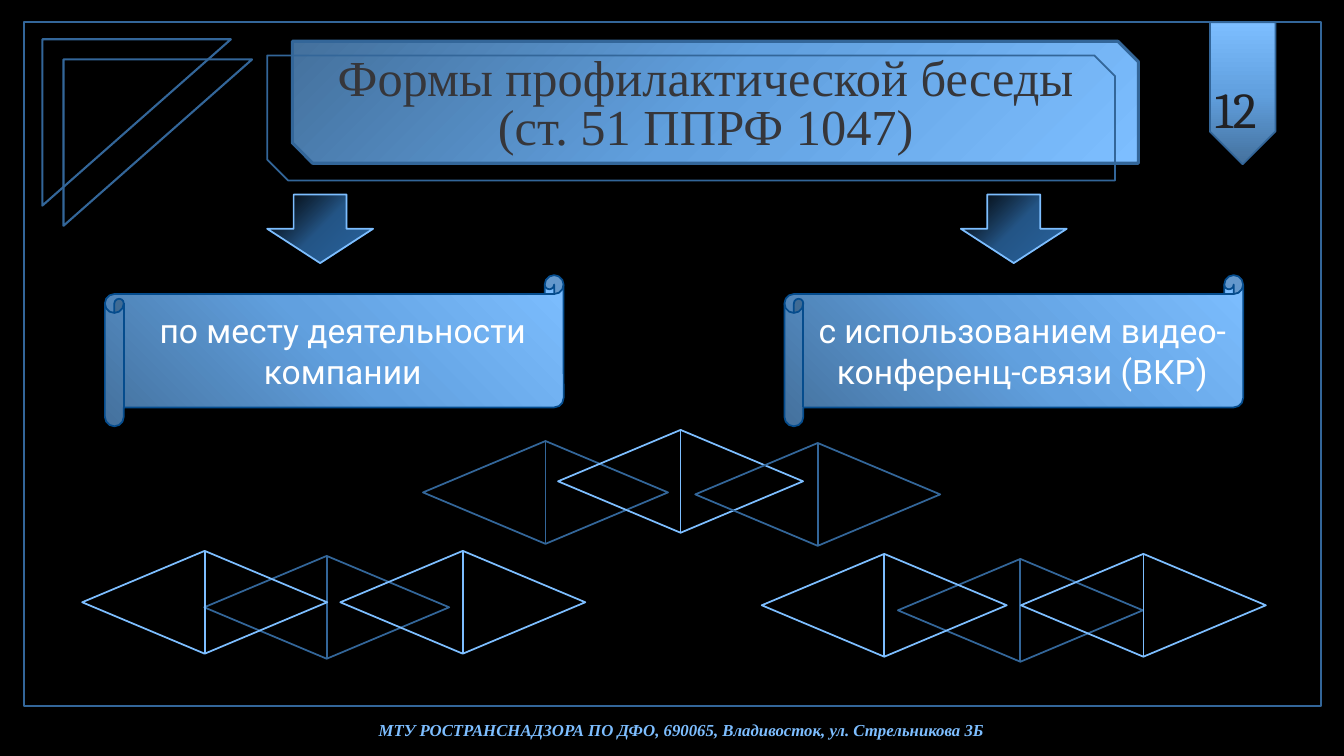
from dataclasses import dataclass

from lxml import etree
from pptx import Presentation
from pptx.dml.color import RGBColor
from pptx.enum.shapes import MSO_SHAPE
from pptx.enum.text import MSO_AUTO_SIZE, PP_ALIGN
from pptx.oxml.ns import qn
from pptx.util import Inches, Pt

RECTANGLE = MSO_SHAPE.RECTANGLE
TRIANGLE = MSO_SHAPE.RIGHT_TRIANGLE
PENTAGON = MSO_SHAPE.PENTAGON
SNIPPED = MSO_SHAPE.SNIP_2_DIAG_RECTANGLE
SCROLL = MSO_SHAPE.HORIZONTAL_SCROLL
DOWN_ARROW = MSO_SHAPE.DOWN_ARROW
SORT_DIAMOND = MSO_SHAPE.FLOWCHART_SORT
CENTER, LEFT = PP_ALIGN.CENTER, PP_ALIGN.LEFT
FIT_SHAPE = MSO_AUTO_SIZE.SHAPE_TO_FIT_TEXT


@dataclass(frozen=True)
class Theme:
    background: str = "000000"
    frame: str = "336699"
    bright: str = "7DBEFF"
    scroll_edge: str = "054C8D"
    title: str = "36363A"
    number: str = "212123"
    label: str = "FFFFFF"
    serif: str = "Times New Roman"
    sans: str = "Roboto"
    number_font: str = "Cambria"
    title_size: int = 36
    label_size: int = 24
    footer_size: int = 12
    # Gradient stops: position, colour, opacity (percent)
    panel: tuple = ((0, "44719D", 100), (50, "61A0DF", 100), (100, "7DBEFF", 100))
    arrow: tuple = ((0, "1A3C5F", 0), (50, "255687", 100), (100, "2B66A1", 100))


THEME = Theme()


def fill_gradient(shape, stops, angle):
    """Fill with the stops; the angle runs clockwise in degrees."""
    shape.fill.gradient()
    shape.fill.gradient_angle = (360 - angle) % 360
    stop_list = shape.element.spPr.find(qn("a:gradFill")).find(qn("a:gsLst"))
    for stop in list(stop_list):
        stop_list.remove(stop)
    for position, color, opacity in stops:
        stop = etree.SubElement(stop_list, qn("a:gs"), pos=str(position * 1000))
        tint = etree.SubElement(stop, qn("a:srgbClr"), val=color)
        if opacity < 100:
            etree.SubElement(tint, qn("a:alpha"), val=str(opacity * 1000))


def add_figure(page, kind, area, line, width=1.25, gradient=None, angle=0, rotation=0):
    shape = page.shapes.add_shape(kind, *map(Inches, area))
    shape.shadow.inherit = False
    shape.rotation = rotation
    shape.line.color.rgb = RGBColor.from_string(line)
    shape.line.width = Pt(width)
    if gradient:
        fill_gradient(shape, gradient, angle)
    else:
        shape.fill.background()
    return shape


def add_text(page, area, text, font, size, color, align=CENTER, spacing=None,
             wrap=True, fit=FIT_SHAPE, **style):
    box = page.shapes.add_textbox(*map(Inches, area))
    frame = box.text_frame
    frame.word_wrap = wrap
    frame.auto_size = fit
    para = frame.paragraphs[0]
    para.alignment = align
    para.line_spacing = spacing
    span = para.add_run()
    span.text = text
    span.font.color.rgb = RGBColor.from_string(color)
    for name, value in {"name": font, "size": Pt(size), **style}.items():
        setattr(span.font, name, value)


def add_corner_triangle(page, left, top):
    triangle = add_figure(page, TRIANGLE, (left, top, 1.87, 1.65), THEME.frame, 1.5)
    triangle.element.spPr.find(qn("a:xfrm")).set("flipV", "1")


def add_form(page, scroll_left, arrow_left, text):
    add_figure(page, SCROLL, (scroll_left, 2.73, 4.55, 1.5), THEME.scroll_edge,
               gradient=THEME.panel, angle=315)
    add_text(page, (scroll_left + 0.17, 3.03, 4.38, 0.91), text,
             THEME.sans, THEME.label_size, THEME.label)
    add_figure(page, DOWN_ARROW, (arrow_left, 1.93, 1.05, 0.68), THEME.bright,
               gradient=THEME.arrow, angle=45)


def add_diamonds(page, diamonds):
    for left, top, color in diamonds:
        add_figure(page, SORT_DIAMOND, (left, top, 1.02, 2.43), color, rotation=90)


def main():
    deck = Presentation()
    deck.slide_width, deck.slide_height = Inches(13.33), Inches(7.5)
    page = deck.slides.add_slide(deck.slide_layouts[6])
    page.background.fill.solid()
    page.background.fill.fore_color.rgb = RGBColor.from_string(THEME.background)

    # Frame, footer and corner ornament
    add_figure(page, RECTANGLE, (0.24, 0.22, 12.86, 6.78), THEME.frame, 1.5)
    add_text(page, (2.23, 7.13, 9.06, 0.26),
             "МТУ РОСТРАНСНАДЗОРА ПО ДФО, 690065, Владивосток, ул. Стрельникова 3Б",
             THEME.serif, THEME.footer_size, THEME.bright, spacing=0.8,
             fit=MSO_AUTO_SIZE.NONE, bold=True, italic=True)
    for left, top in ((0.42, 0.39), (0.63, 0.59)):
        add_corner_triangle(page, left, top)

    # Page number ribbon
    add_figure(page, PENTAGON, (11.62, 0.6, 1.41, 0.65), THEME.frame,
               gradient=THEME.panel, angle=180, rotation=90)
    add_text(page, (11.95, 0.73, 0.76, 0.71), "12", THEME.number_font,
             THEME.title_size, THEME.number, align=LEFT, wrap=False)

    # Title plate
    add_figure(page, SNIPPED, (2.9, 0.41, 8.39, 1.21), THEME.frame, 2.25,
               gradient=THEME.panel, angle=45)
    add_text(page, (3, 0.52, 8, 1.08),
             "Формы профилактической беседы (ст. 51 ППРФ 1047)",
             THEME.serif, THEME.title_size, THEME.title, spacing=Pt(35))
    add_figure(page, SNIPPED, (2.65, 0.55, 8.41, 1.24), THEME.frame)

    # The two forms of the talk
    add_form(page, 1.04, 2.65, "по месту деятельности компании")
    add_form(page, 7.78, 9.53, "с использованием видео-конференц-связи (ВКР)")

    # Diamond ornaments: left, middle, right
    dark, bright = THEME.frame, THEME.bright
    add_diamonds(page, ((2.73, 4.81, dark), (1.52, 4.76, bright), (4.08, 4.76, bright)))
    add_diamonds(page, ((4.9, 3.67, dark), (6.24, 3.56, bright), (7.6, 3.69, dark)))
    add_diamonds(page, ((9.61, 4.84, dark), (10.83, 4.79, bright), (8.26, 4.79, bright)))

    deck.save("out.pptx")


if __name__ == "__main__":
    main()
